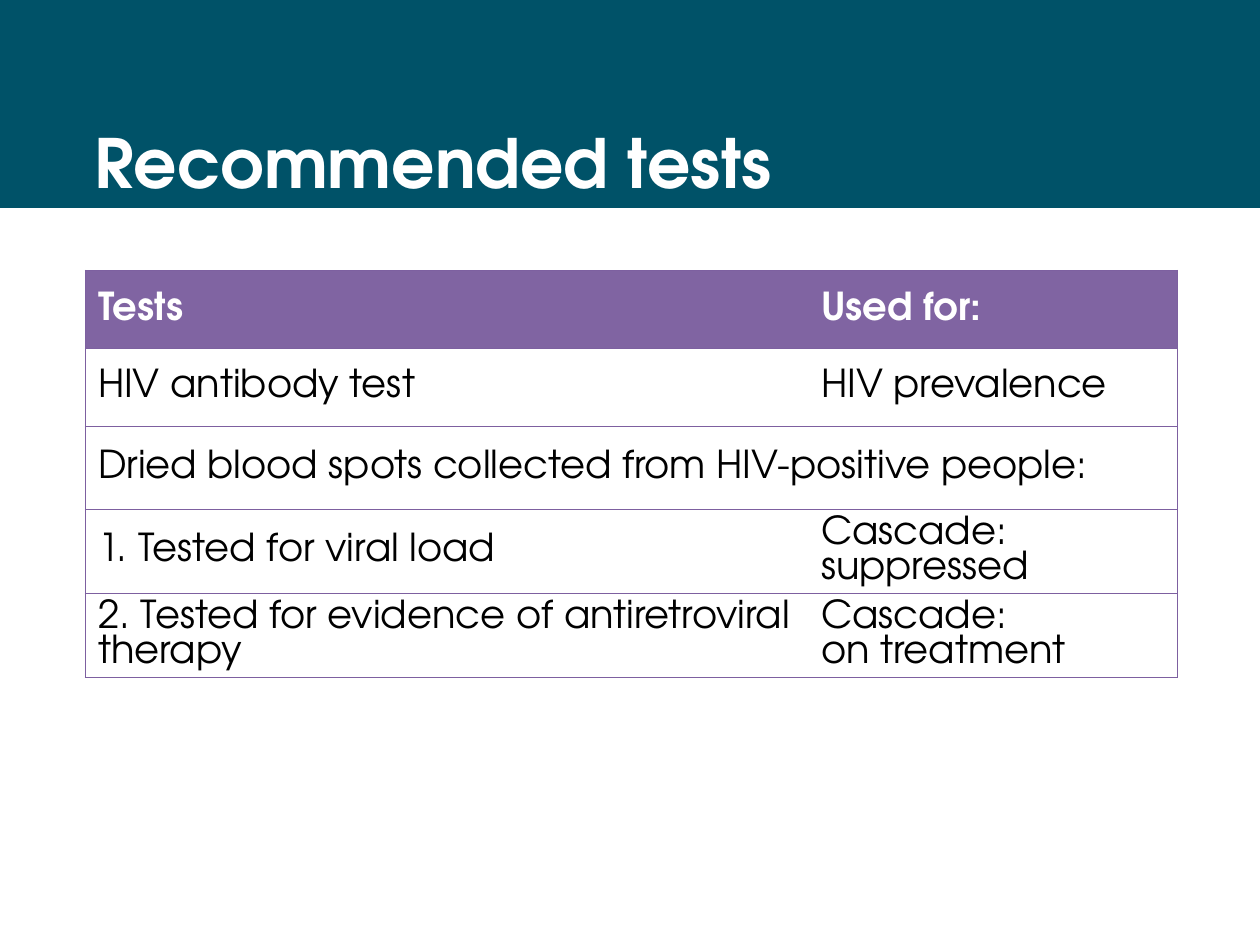
from lxml.etree import SubElement
from pptx import Presentation
from pptx.dml.color import RGBColor
from pptx.enum.shapes import MSO_SHAPE
from pptx.enum.text import MSO_ANCHOR, MSO_AUTO_SIZE, PP_ALIGN
from pptx.oxml.ns import qn
from pptx.util import Pt

TITLE = "Recommended tests"
ROWS = [
    ("Tests", "Used for:"),
    ("HIV antibody test", "HIV prevalence"),
    ("Dried blood spots collected from HIV-positive people:", None),
    ("1. Tested for viral load", "Cascade:\vsuppressed"),
    ("2. Tested for evidence of antiretroviral therapy", "Cascade:\von treatment"),
]
COL_WIDTHS = [413.3, 211]
ROW_HEIGHTS = [44.6, 44.6, 47.5, 48, 48]
FONT = "TeX Gyre Adventor"
TEAL, PURPLE, BORDER, WHITE, BLACK = "005268", "8064A2", "7D60A0", "FFFFFF", "000000"


def rgb(value):
    return RGBColor.from_string(value)


def write(tf, text, size=22, color=BLACK, bold=False, spacing=None):
    tf.text = text
    p = tf.paragraphs[0]
    p.alignment = PP_ALIGN.LEFT
    if spacing:
        p.line_spacing = spacing
    for r in p.runs:
        r.font.name = FONT
        r.font.size = Pt(size)
        r.font.bold = bold
        r.font.color.rgb = rgb(color)


def set_borders(cell, sides):
    tcPr = cell._tc.get_or_add_tcPr()
    for side in "LRTB":
        ln = SubElement(tcPr, qn(f"a:ln{side}"), w=str(Pt(0.75)))
        if side in sides:
            fill = SubElement(ln, qn("a:solidFill"))
            SubElement(fill, qn("a:srgbClr"), val=BORDER)
        else:
            SubElement(ln, qn("a:noFill"))


prs = Presentation()
prs.slide_width, prs.slide_height = Pt(720), Pt(540)
s = prs.slides.add_slide(prs.slide_layouts[5])

banner = s.shapes.add_shape(MSO_SHAPE.RECTANGLE, 0, 0, Pt(720), Pt(118.8))
banner.shadow.inherit = False
banner.fill.solid()
banner.fill.fore_color.rgb = rgb(TEAL)
banner.line.fill.background()

title = s.shapes.title
banner._element.addnext(title._element)
title.left, title.top, title.width, title.height = Pt(46.8), Pt(40.3), Pt(626.4), Pt(79.2)
tf = title.text_frame
tf.auto_size = MSO_AUTO_SIZE.NONE
tf.vertical_anchor = MSO_ANCHOR.BOTTOM
write(tf, TITLE, size=38.8, color=WHITE, bold=True, spacing=0.9)

table = s.shapes.add_table(len(ROWS), len(COL_WIDTHS), Pt(48.8), Pt(154.5),
                           Pt(sum(COL_WIDTHS)), Pt(sum(ROW_HEIGHTS))).table
for col, width in zip(table.columns, COL_WIDTHS):
    col.width = Pt(width)
for row, height in zip(table.rows, ROW_HEIGHTS):
    row.height = Pt(height)

for i, texts in enumerate(ROWS):
    header = i == 0
    if texts[1] is None:
        table.cell(i, 0).merge(table.cell(i, 1))
    for j, text in enumerate(texts):
        cell = table.cell(i, j)
        set_borders(cell, "LRTB" if texts[1] is None else "LTB" if j == 0 else "RTB")
        cell.fill.solid()
        cell.fill.fore_color.rgb = rgb(PURPLE if header else WHITE)
        cell.vertical_anchor = MSO_ANCHOR.MIDDLE
        if text:
            write(cell.text_frame, text, color=WHITE if header else BLACK,
                  bold=header, spacing=Pt(20.4))

prs.save("out.pptx")
